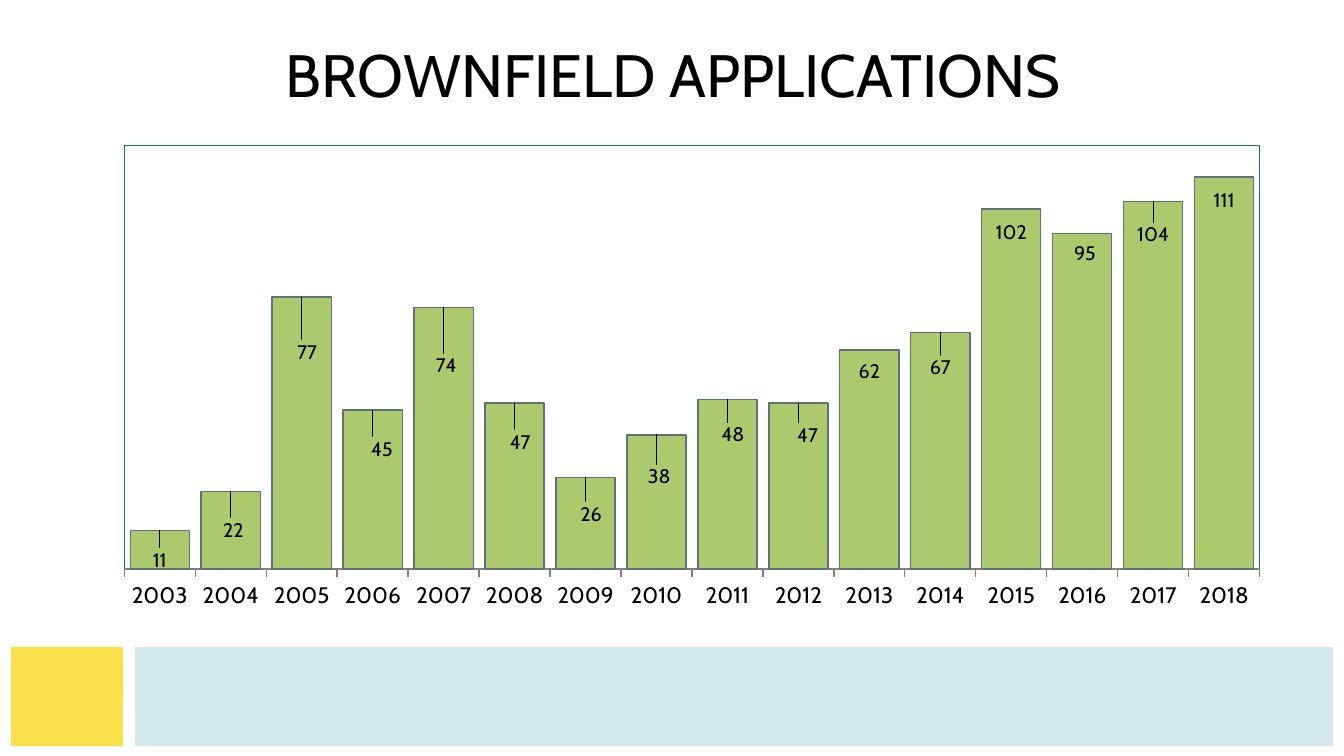
from lxml import etree
from pptx import Presentation
from pptx.chart.data import CategoryChartData
from pptx.dml.color import RGBColor
from pptx.enum import chart as ch, text
from pptx.oxml import parse_xml
from pptx.oxml.ns import nsdecls, qn
from pptx.util import Pt

BLACK = RGBColor(0x00, 0x00, 0x00)
YELLOW = RGBColor(0xFA, 0xE0, 0x4B)
PALE_BLUE = RGBColor(0xC8, 0xE4, 0xE8)
GREEN = RGBColor(0xAD, 0xC9, 0x6D)
SLATE = RGBColor(0x5B, 0x73, 0x78)
GRAY = RGBColor(0x80, 0x80, 0x80)
TEAL = RGBColor(0x10, 0x70, 0x90)
FONT = "Cabin"

FIRST_YEAR = 2003
APPLICATIONS = [11, 22, 77, 45, 74, 47, 26, 38, 48, 47, 62, 67, 102, 95, 104, 111]
LABEL_SHIFTS = [
    (0, 25.7), (1.5, 30.5), (3, 39), (5, 30.5), (1.5, 40.7), (3, 30.5),
    (3, 29.5), (1.5, 32), (3, 28.4), (5, 26.8), (0, 21), (0, 28.4),
    (0, 22), (1.5, 20.4), (0, 27.3), (0, 22),
]


def set_font(font, size):
    font.name = FONT
    font.size = Pt(size)
    font.color.rgb = BLACK


def manual_layout(**values):
    layout = parse_xml(f"<c:layout {nsdecls('c')}><c:manualLayout/></c:layout>")
    for tag, value in values.items():
        etree.SubElement(layout[0], qn(f"c:{tag}")).set("val", str(value))
    return layout


def add_block(slide, corners, color, opacity=None):
    points = [(Pt(x), Pt(y)) for x, y in corners]
    builder = slide.shapes.build_freeform(*points[0])
    builder.add_line_segments(points[1:], close=True)
    block = builder.convert_to_shape()
    block.shadow.inherit = False
    block.fill.solid()
    block.fill.fore_color.rgb = color
    block.line.fill.background()
    if opacity:
        srgb = block.fill._xPr.find(".//" + qn("a:srgbClr"))
        etree.SubElement(srgb, qn("a:alpha")).set("val", str(opacity * 1000))


def add_footer(slide, left, top, width, height):
    right, bottom = left + width, top + height
    square_right, band_left = left + 60, left + 66.25
    add_block(slide, [(left, bottom), (left, top), (square_right, top),
                      (square_right - 0.25, bottom)], YELLOW)
    add_block(slide, [(band_left, bottom), (band_left + 0.25, top),
                      (right, top), (right, bottom)], PALE_BLUE, 80)


def add_title(slide, left, top, width, height):
    frame = slide.shapes.add_textbox(Pt(left), Pt(top), Pt(width), Pt(height)).text_frame
    frame.word_wrap = True
    frame.vertical_anchor = text.MSO_ANCHOR.MIDDLE
    frame.margin_top = frame.margin_bottom = 0
    heading = frame.paragraphs[0]
    heading.text = "BROWNFIELD APPLICATIONS"
    heading.alignment = text.PP_ALIGN.CENTER
    set_font(heading.font, 32)


def style_axes(chart):
    years = chart.category_axis
    years.has_major_gridlines = False
    years.major_tick_mark = ch.XL_TICK_MARK.OUTSIDE
    years.format.line.color.rgb = GRAY
    years.format.line.width = Pt(0.75)
    set_font(years.tick_labels.font, 12)
    counts = chart.value_axis
    counts.minimum_scale, counts.maximum_scale = 0, 120
    counts.has_major_gridlines = False
    counts.visible = False


def frame_plot(chart):
    area = chart._chartSpace.chart.plotArea
    for layout in area.findall(qn("c:layout")):
        area.remove(layout)
    area.insert(0, manual_layout(layoutTarget="inner", xMode="edge", yMode="edge",
                                 x=0, y=0.028, w=0.992, h=0.862))
    area.append(parse_xml(
        f'<c:spPr {nsdecls("c", "a")}><a:noFill/><a:ln w="{Pt(0.75)}"><a:solidFill>'
        f'<a:srgbClr val="{TEAL}"/></a:solidFill></a:ln></c:spPr>'))


def add_applications_chart(slide, left, top, width, height):
    data = CategoryChartData()
    data.categories = [str(FIRST_YEAR + i) for i in range(len(APPLICATIONS))]
    data.add_series("Series 1", APPLICATIONS)
    chart = slide.shapes.add_chart(ch.XL_CHART_TYPE.COLUMN_CLUSTERED, Pt(left), Pt(top),
                                   Pt(width), Pt(height), data).chart
    chart.has_legend = False
    chart.has_title = False
    set_font(chart.font, 10)
    style_axes(chart)
    frame_plot(chart)

    plot = chart.plots[0]
    plot.gap_width = 20
    plot.vary_by_categories = False
    bars = plot.series[0]
    bars.format.fill.solid()
    bars.format.fill.fore_color.rgb = GREEN
    bars.format.line.color.rgb = SLATE
    bars.format.line.width = Pt(0.75)
    bars.data_labels.show_value = True
    set_font(bars.data_labels.font, 10.5)
    for i, (dx, dy) in enumerate(LABEL_SHIFTS):
        label = bars.points[i].data_label
        set_font(label.font, 10.5)
        label.position = ch.XL_LABEL_POSITION.OUTSIDE_END
        index = bars._element.find(f"{qn('c:dLbls')}/{qn('c:dLbl')}[{i + 1}]/{qn('c:idx')}")
        index.addnext(manual_layout(x=round(dx / width, 4), y=round(dy / height, 4)))


def main():
    deck = Presentation()
    deck.slide_width, deck.slide_height = Pt(720), Pt(405)
    slide = deck.slides.add_slide(deck.slide_layouts[6])
    add_footer(slide, 6, 346.5, 708, 53.25)
    add_title(slide, 64.8, 23.5, 592, 32.4)
    add_applications_chart(slide, 66.25, 70.5, 613.5, 263.5)
    deck.save("out.pptx")


if __name__ == "__main__":
    main()
